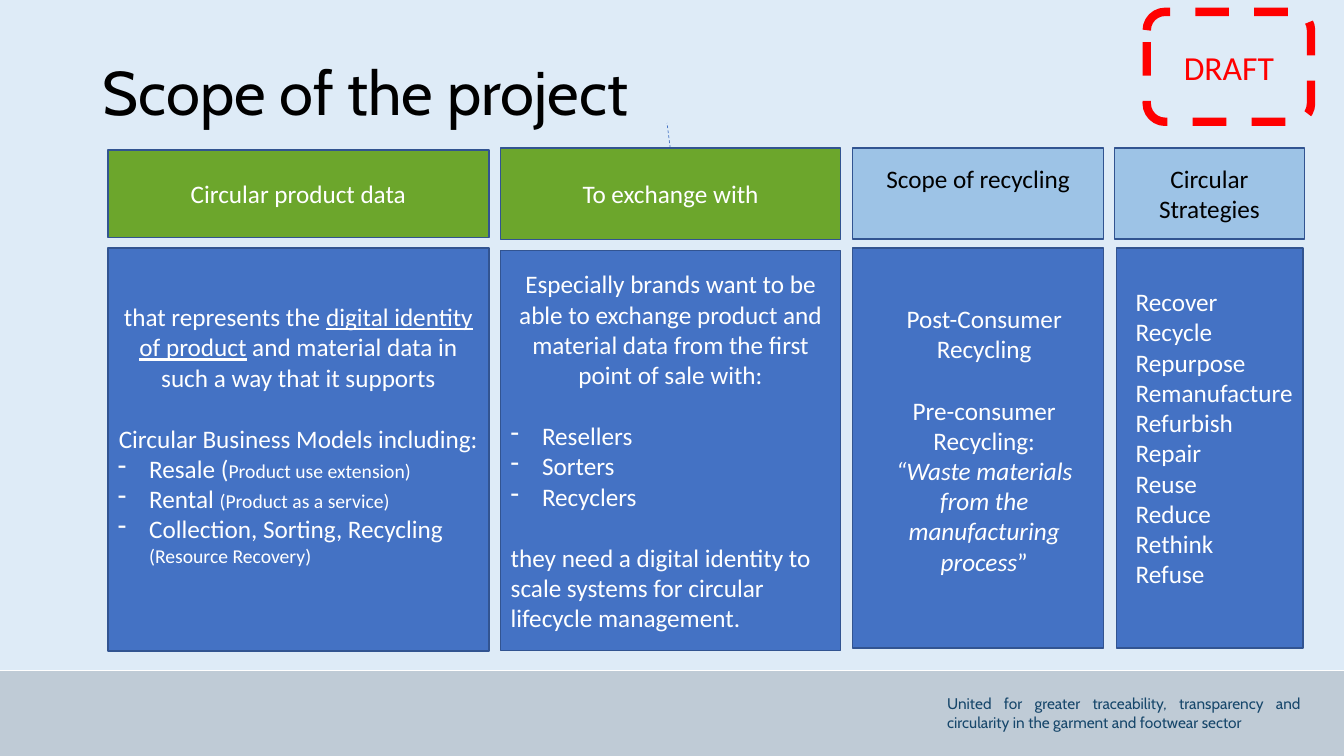
"""Builds the slide on the scope of a circular product data project."""
from lxml import etree
from pptx import Presentation
from pptx.dml.color import RGBColor
from pptx.enum.dml import MSO_LINE
from pptx.enum.shapes import MSO_CONNECTOR, MSO_SHAPE
from pptx.enum.text import MSO_ANCHOR, MSO_AUTO_SIZE, PP_ALIGN
from pptx.oxml.ns import qn
from pptx.util import Cm, Pt

PROCESS, ROUND = MSO_SHAPE.FLOWCHART_PROCESS, MSO_SHAPE.ROUNDED_RECTANGLE
DASH, STRAIGHT = MSO_LINE.DASH, MSO_CONNECTOR.STRAIGHT
TOP, MIDDLE = MSO_ANCHOR.TOP, MSO_ANCHOR.MIDDLE
ALIGN = {"c": PP_ALIGN.CENTER, "l": PP_ALIGN.LEFT,
         "-": PP_ALIGN.LEFT, "j": PP_ALIGN.JUSTIFY}
COLOURS = {"sky": "DEEBF7", "bar": "BFCBD6", "panel": "4472C4", "edge": "325491",
           "green": "6CA62C", "pale": "9DC3E6", "red": "FF0000",
           "navy": "17476B", "white": "FFFFFF", "black": "000000"}
RGB = {name: RGBColor.from_string(code) for name, code in COLOURS.items()}


def paint(shape, fill, edge=None, width=1):
    """Set the fill and outline of a shape."""
    if fill:
        shape.fill.solid()
        shape.fill.fore_color.rgb = RGB[fill]
    else:
        shape.fill.background()
    if edge:
        shape.line.color.rgb = RGB[edge]
        shape.line.width = Pt(width)
    else:
        shape.line.fill.background()
    shape.shadow.inherit = False


def write(shape, rows, colour, size=18, face="Calibri", anchor=MIDDLE):
    """Fill a shape with rows of (kind, space before, runs with style letters)."""
    frame = shape.text_frame
    frame.word_wrap = True
    frame.auto_size = MSO_AUTO_SIZE.NONE
    frame.vertical_anchor = anchor
    for n, (kind, gap, parts) in enumerate(rows):
        para = frame.add_paragraph() if n else frame.paragraphs[0]
        props = para._p.get_or_add_pPr()
        indent = Cm(0.79) if kind == "-" else 0
        props.set("marL", str(indent))
        props.set("indent", str(-indent))
        if kind == "-":
            etree.SubElement(props, qn("a:buChar")).set("char", "-")
        else:
            etree.SubElement(props, qn("a:buNone"))
        para.alignment = ALIGN[kind]
        para.space_before = Pt(gap)
        for text, style in parts:
            run = para.add_run()
            run.text = text
            run.font.name = face
            run.font.size = Pt(14 if style == "s" else size)
            run.font.color.rgb = RGB[colour]
            run.font.underline = style == "u"
            run.font.italic = style == "i"


deck = Presentation()
deck.slide_width, deck.slide_height = Cm(33.87), Cm(19.05)
slide = deck.slides.add_slide(deck.slide_layouts[1])
shapes = slide.shapes
title, plans = slide.placeholders

for fill, top, high in [("bar", 16.92, 2.13), ("sky", 0, 16.89)]:
    band = shapes.add_shape(PROCESS, 0, Cm(top), deck.slide_width, Cm(high))
    paint(band, fill)

for item in (title, plans):
    shapes._spTree.append(item._element)

motto = shapes.add_textbox(Cm(23.62), Cm(17.37), Cm(9.42), Cm(1.19))
write(motto, [("j", 0, [("United for greater traceability, transparency and "
                         "circularity in the garment and footwear sector", "")])],
      "navy", 11, "Cabin", TOP)

title.left, title.top, title.width, title.height = Cm(2.34), Cm(1.02), Cm(29.21), Cm(2.79)
write(title, [("l", 0, [("Scope of the project", "")])], "black", 44, "Cabin")
title.text_frame.paragraphs[0].line_spacing = 0.9

link = shapes.add_connector(STRAIGHT, Cm(16.89), Cm(3.73), Cm(16.81), Cm(3.1))
link.line.color.rgb = RGB["panel"]
link.line.width = Pt(0.5)
link.line.dash_style = DASH
etree.SubElement(link._element.spPr, qn("a:effectLst"))

heads = [
    ("Circular product data", 2.72, 3.78, 9.6, 2.21, "green", "white", 0.13),
    ("To exchange with", 12.62, 3.73, 8.56, 2.31, "green", "white", 0.13),
    ("Scope of recycling", 21.49, 3.73, 6.32, 2.29, "pale", "black", 0.9),
    ("Circular Strategies", 28.09, 3.73, 4.78, 2.29, "pale", "black", 0.13),
]
for text, left, top, wide, high, fill, ink, foot in heads:
    head = shapes.add_shape(PROCESS, Cm(left), Cm(top), Cm(wide), Cm(high))
    paint(head, fill, "edge")
    write(head, [("c", 0, [(text, "")])], ink)
    head.text_frame.margin_bottom = Cm(foot)

models = [
    ("c", 0, [("that represents the ", ""), ("digital identity of product", "u"),
              (" and material data in", "")]),
    ("c", 0, [("such a way that it supports", "")]),
    ("c", 22, [("Circular Business Models including:", "")]),
    ("-", 0, [("Resale (", ""), ("Product use extension)", "s")]),
    ("-", 0, [("Rental ", ""), ("(Product as a service)", "s")]),
    ("-", 0, [("Collection, Sorting, Recycling ", ""), ("(Resource Recovery)", "s")]),
]
trade = [
    ("c", 0, [("Especially brands want to be able to exchange product and "
               "material data from the first point of sale with:", "")]),
    ("-", 22, [("Resellers", "")]),
    ("-", 0, [("Sorters", "")]),
    ("-", 0, [("Recyclers", "")]),
    ("l", 22, [("they need a digital identity to scale systems for circular "
                "lifecycle management.", "")]),
]
waste = [
    ("c", 0, [("Post-Consumer Recycling", "")]),
    ("c", 22, [("Pre-consumer Recycling:", "")]),
    ("c", 0, [("“Waste materials from the manufacturing process", "i"), ("”", "")]),
]
words = ["Recover", "Recycle", "Repurpose", "Remanufacture", "Refurbish",
         "Repair", "Reuse", "Reduce", "Rethink", "Refuse"]
steps = [("l", 0, [(word, "")]) for word in words]

panels = [
    (models, 2.72, 6.25, 9.6, 10.16, MIDDLE, (0.25, 0.13, 0.25, 0.9)),
    (trade, 12.62, 6.32, 8.56, 10.08, MIDDLE, (0.25, 0.13, 0.25, 0.13)),
    (waste, 21.49, 6.25, 6.32, 10.08, TOP, (0.56, 1.4, 0.25, 0.13)),
    (steps, 28.14, 6.25, 4.7, 10.08, TOP, (0.48, 0.97, 0, 0.13)),
]
for rows, left, top, wide, high, anchor, inset in panels:
    if rows is steps:
        panel = plans
        panel.left, panel.top, panel.width, panel.height = Cm(left), Cm(top), Cm(wide), Cm(high)
    else:
        panel = shapes.add_shape(PROCESS, Cm(left), Cm(top), Cm(wide), Cm(high))
    paint(panel, "panel", "edge")
    write(panel, rows, "white", anchor=anchor)
    frame = panel.text_frame
    (frame.margin_left, frame.margin_top,
     frame.margin_right, frame.margin_bottom) = map(Cm, inset)

stamp = shapes.add_shape(ROUND, Cm(28.9), Cm(0.3), Cm(4.14), Cm(2.77))
paint(stamp, None, "red", 6)
stamp.line.dash_style = DASH
write(stamp, [("c", 0, [("DRAFT", "")])], "red", 24)

deck.save("out.pptx")
